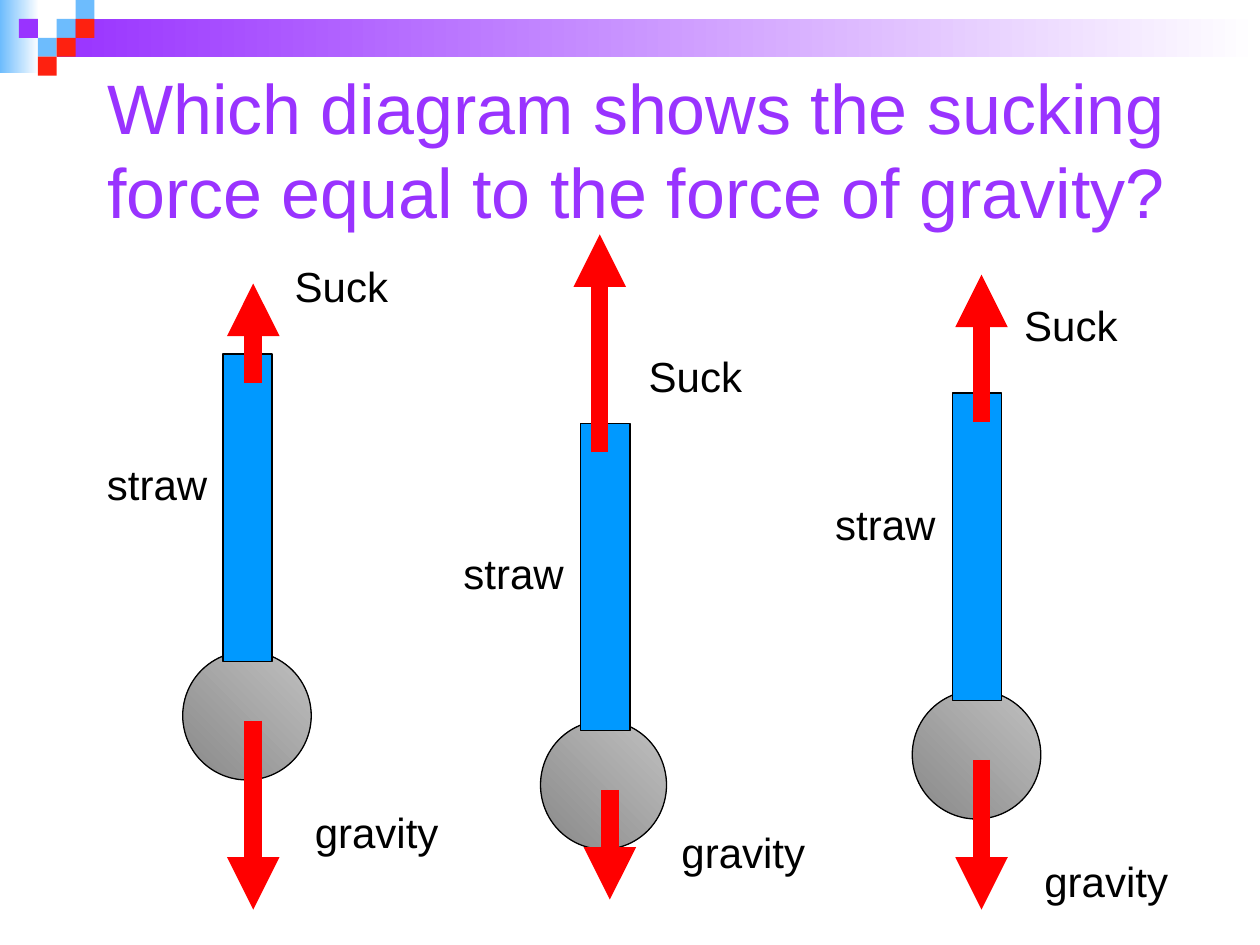
from lxml.etree import SubElement
from pptx import Presentation
from pptx.dml.color import RGBColor
from pptx.enum.shapes import MSO_CONNECTOR, MSO_SHAPE
from pptx.enum.text import MSO_ANCHOR, MSO_AUTO_SIZE, PP_ALIGN
from pptx.oxml.ns import qn
from pptx.util import Inches, Pt

PURPLE, SKY, RED_TILE = "9933FF", "6DBCFD", "FE2110"
BLACK, WHITE, STRAW_BLUE, ARROW_RED = "000000", "FFFFFF", "0099FF", "FF0000"
TILE = 0.15

# Straw corner, ball width, arrow columns and tips, label corners
DIAGRAMS = [
    dict(corner=(1.77, 2.81), ball_width=1.02, suck_x=2.01, suck_tip=2.25,
         gravity_x=2.01, gravity_tip=7.22,
         labels=[("straw", 0.75, 3.59), ("Suck", 2.24, 2.02), ("gravity", 2.4, 6.35)]),
    dict(corner=(4.61, 3.36), ball_width=1, suck_x=4.76, suck_tip=1.86,
         gravity_x=4.84, gravity_tip=7.14,
         labels=[("straw", 3.58, 4.3), ("Suck", 5.05, 2.73), ("gravity", 5.31, 6.51)]),
    dict(corner=(7.56, 3.12), ball_width=1.02, suck_x=7.79, suck_tip=2.18,
         gravity_x=7.79, gravity_tip=7.22,
         labels=[("straw", 6.53, 3.91), ("Suck", 8.03, 2.33), ("gravity", 8.19, 6.74)]),
]
LABEL_WIDTHS = {"straw": 1.02, "Suck": 1.18, "gravity": 1.81}


def color(hex_value):
    return RGBColor.from_string(hex_value)


def write_text(box, text, size=24, hex_value=BLACK, anchor=MSO_ANCHOR.TOP, space_before=0):
    frame = box.text_frame
    frame.word_wrap = True
    frame.vertical_anchor = anchor
    para = frame.paragraphs[0]
    para.alignment = PP_ALIGN.LEFT
    para.space_before = Pt(space_before)
    span = para.add_run()
    span.text = text
    span.font.name = "Arial"
    span.font.size = Pt(size)
    span.font.color.rgb = color(hex_value)


def add_figure(page, kind, left, top, width, height, colors, angle=0, outline=None):
    """Add a preset shape; one colour fills it flat, two make a gradient."""
    shape = page.shapes.add_shape(kind, Inches(left), Inches(top), Inches(width), Inches(height))
    shape.shadow.inherit = False
    if len(colors) == 1:
        shape.fill.solid()
        shape.fill.fore_color.rgb = color(colors[0])
    else:
        shape.fill.gradient()
        shape.fill.gradient_angle = angle
        for stop, hex_value in zip(shape.fill.gradient_stops, colors):
            stop.color.rgb = color(hex_value)
    if outline:
        shape.line.color.rgb = color(outline)
        shape.line.width = Pt(0.75)
    else:
        shape.line.fill.background()


def add_arrow(page, x, start, tip):
    arrow = page.shapes.add_connector(
        MSO_CONNECTOR.STRAIGHT, Inches(x), Inches(start), Inches(x), Inches(tip))
    arrow.line.color.rgb = color(ARROW_RED)
    arrow.line.width = Pt(10)
    SubElement(arrow.line._get_or_add_ln(), qn("a:tailEnd"), type="triangle")
    SubElement(arrow._element.spPr, qn("a:effectLst"))


def add_label(page, text, left, top):
    box = page.shapes.add_textbox(
        Inches(left), Inches(top), Inches(LABEL_WIDTHS[text]), Inches(0.5))
    write_text(box, text)
    box.text_frame.auto_size = MSO_AUTO_SIZE.SHAPE_TO_FIT_TEXT


def add_banner(page):
    rect = MSO_SHAPE.RECTANGLE
    add_figure(page, rect, 0, 0, 0.31, 0.58, [SKY, WHITE])
    add_figure(page, rect, 0.45, 0.15, 9.55, 0.3, [PURPLE, WHITE])
    # Mosaic tiles: column, row, colour
    tiles = [(3, 1, SKY), (4, 0, SKY), (4, 1, RED_TILE), (2, 2, SKY),
             (1, 1, PURPLE), (3, 2, RED_TILE), (2, 3, RED_TILE)]
    for column, row, hex_value in tiles:
        add_figure(page, rect, column * TILE, row * TILE, TILE, TILE, [hex_value])


def add_title(page, text):
    title = page.shapes.title
    title.left, title.top = Inches(0.75), Inches(0.5)
    title.width, title.height = Inches(8.75), Inches(1.36)
    write_text(title, text, size=40, hex_value=PURPLE, anchor=MSO_ANCHOR.MIDDLE)


def add_diagram(page, corner, ball_width, suck_x, suck_tip, gravity_x, gravity_tip, labels):
    left, top = corner
    add_figure(page, MSO_SHAPE.OVAL, left - 0.32, top + 2.36, ball_width, 1.02,
               ["898989", "C0C0C0"], angle=45, outline=BLACK)
    add_figure(page, MSO_SHAPE.RECTANGLE, left, top, 0.39, 2.44, [STRAW_BLUE], outline=BLACK)
    add_arrow(page, gravity_x, top + 2.91, gravity_tip)
    add_arrow(page, suck_x, top + 0.23, suck_tip)
    for text, x, y in labels:
        add_label(page, text, x, y)


def main():
    deck = Presentation()
    deck.slide_width, deck.slide_height = Inches(10), Inches(7.5)
    page = deck.slides.add_slide(deck.slide_layouts[5])
    add_banner(page)
    add_title(page, "Which diagram shows the sucking force equal to the force of gravity?")
    for diagram in DIAGRAMS:
        add_diagram(page, **diagram)
    deck.save("out.pptx")


if __name__ == "__main__":
    main()
